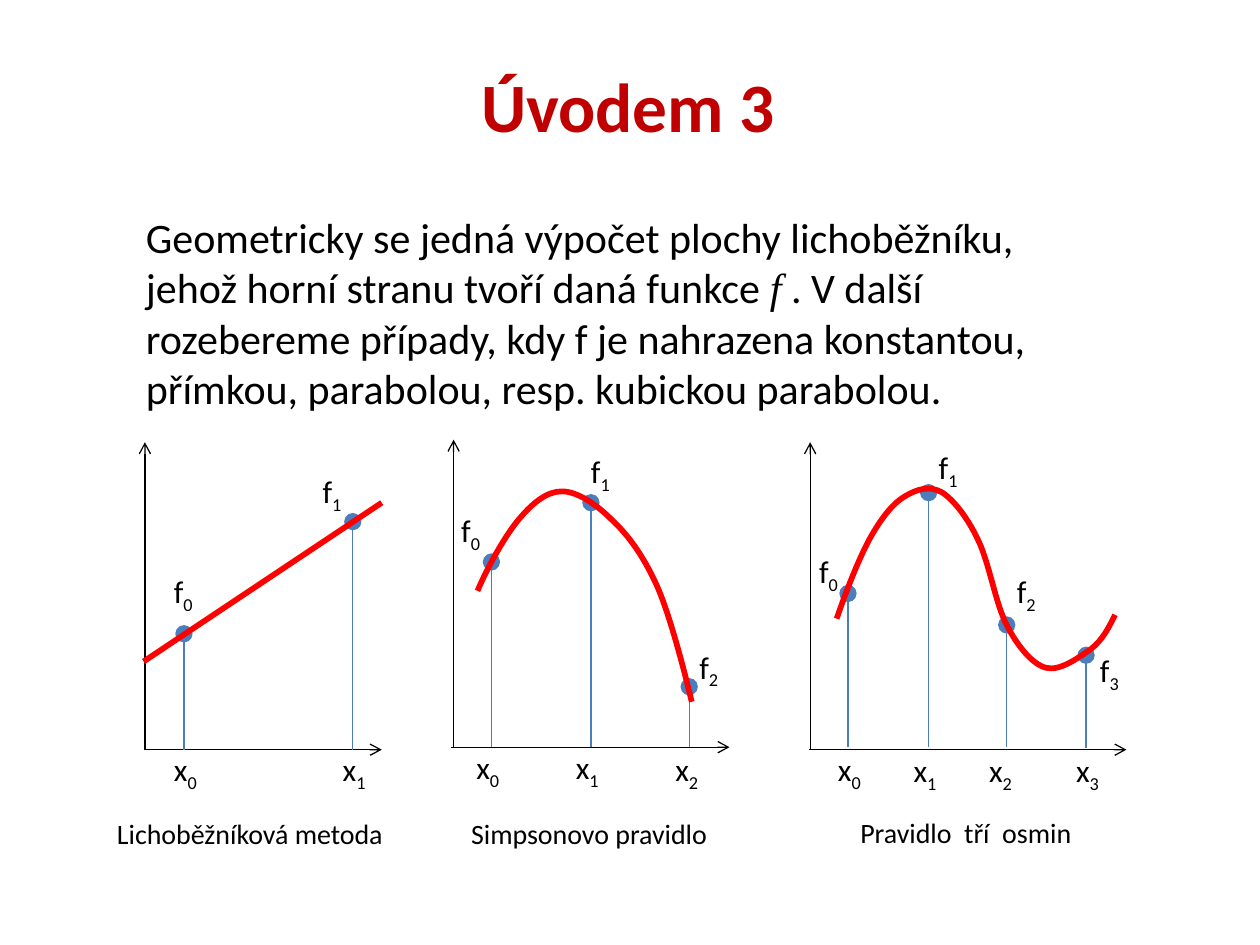
from pptx import Presentation
from pptx.dml.color import RGBColor
from pptx.enum.shapes import MSO_CONNECTOR as Connector
from pptx.enum.text import MSO_ANCHOR as Anchor, MSO_AUTO_SIZE as AutoSize, PP_ALIGN as Align
from pptx.oxml.ns import qn
from pptx.util import Inches, Pt
from lxml.etree import SubElement

# The slide is a grid of 100 columns by 75 rows.
CELL = Inches(0.1)
COLUMNS, ROWS = 100, 75
COLORS = {"title": "C00000", "text": "000000", "axis": "000000", "stem": "4B7EBC", "curve": "FF0000"}
LABEL_SIZE = (3.9, 3.4)
LABEL_MARGINS = {"margin_left": 0.8, "margin_top": 0, "margin_right": 0.4, "margin_bottom": 0.4}

# Axes: left end, baseline, right end, upright axis, its top.
# Points: stem x, stem foot, height of f, left and top of the x label, left and top of the f label.
CHARTS = [
    {
        "axes": (11.4, 59.5, 30.3, 11.5, 35.1),
        "points": [
            (14.6, 59.5, 50.3, 13, 59.5, 13, 45.4),
            (28, 59.5, 41.4, 26.4, 59.5, 24.8, 37.5),
        ],
        "curve": [(11.4, 52.5), (30.3, 39.9)],
        "caption": ("Lichoběžníková metoda", 8.3, 64.3, 23.6),
    },
    {
        "axes": (35.8, 59.3, 57.9, 36, 34.9),
        "points": [
            (39, 59.3, 44.6, 37, 59.4, 35.8, 40.6),
            (46.9, 59.3, 39.9, 44.9, 59.4, 46.1, 35.9),
            (54.7, 59.3, 54.5, 52.8, 59.5, 54.7, 51.4),
        ],
        "curve": [
            (37.9, 46.9),
            (38.7, 45), (40.1, 42.5), (41.2, 41.2),
            (42.3, 39.9), (43.4, 39), (44.6, 39),
            (45.8, 39), (47.3, 40), (48.5, 41.2),
            (49.8, 42.4), (51, 44), (52.1, 46.4),
            (53.2, 48.8), (54.5, 54), (54.9, 55.7),
        ],
        "caption": ("Simpsonovo pravidlo", 36.4, 64.3, 21.5),
    },
    {
        "axes": (64.2, 59.5, 89.4, 64.3, 35.1),
        "points": [
            (67.3, 59.3, 47.1, 65.7, 59.5, 64.2, 43.8),
            (73.7, 59.3, 39.1, 71.7, 59.6, 73.7, 35.6),
            (79.9, 59.3, 49.6, 77.7, 59.6, 79.9, 45.4),
            (86.2, 59.4, 52, 84.6, 59.6, 86.5, 51.7),
        ],
        "curve": [
            (66.4, 49.1),
            (67.2, 46.8), (68.1, 44.5), (69, 42.8),
            (69.9, 41.2), (70.8, 40), (71.8, 39.4),
            (72.8, 38.8), (73.8, 38.5), (74.8, 39.1),
            (75.7, 39.7), (76.8, 41.1), (77.6, 42.8),
            (78.5, 44.6), (79, 47.9), (79.9, 49.6),
            (80.7, 51.2), (81.9, 52.7), (83, 53),
            (84.1, 53.3), (85.6, 52.2), (86.6, 51.5),
            (87.5, 50.8), (88, 49.8), (88.5, 48.8),
        ],
        "caption": ("Pravidlo  tří  osmin", 67.3, 64.2, 19.7),
    },
]


def cells(*counts):
    return [round(count * CELL) for count in counts]


def add_span(para, text, size, color="text", **formats):
    span = para.add_run()
    span.text = text
    for name, value in {"name": "Calibri", "size": Pt(size), **formats}.items():
        setattr(span.font, name, value)
    span.font.color.rgb = RGBColor.from_string(COLORS[color])
    return span


def add_box(shapes, left, top, width, height):
    box = shapes.add_textbox(*cells(left, top, width, height))
    box.text_frame.word_wrap = True
    box.text_frame.auto_size = AutoSize.SHAPE_TO_FIT_TEXT
    return box.text_frame


def add_label(shapes, letter, index, left, top):
    frame = add_box(shapes, left, top, *LABEL_SIZE)
    for name, value in LABEL_MARGINS.items():
        setattr(frame, name, round(value * CELL))
    para = frame.paragraphs[0]
    add_span(para, letter, 18)
    subscript = add_span(para, str(index), 18)
    subscript.font._element.set("baseline", "-25000")


def style_line(line, color, width):
    line.color.rgb = RGBColor.from_string(COLORS[color])
    line.width = Pt(width)


def add_line(shapes, start, end, color, width=0.75, tail=None, tail_size="med"):
    line = shapes.add_connector(Connector.STRAIGHT, *cells(*start, *end))
    style_line(line.line, color, width)
    properties = line._element.spPr
    if tail:
        SubElement(properties.find(qn("a:ln")), qn("a:tailEnd"), type=tail, w=tail_size, len=tail_size)
    SubElement(properties, qn("a:effectLst"))


def add_curve(shapes, points):
    """Draw cubic segments through a start point and triples of control points."""
    start, *controls = [cells(*point) for point in points]
    builder = shapes.build_freeform(*start)
    builder.add_line_segments(controls, close=False)
    curve = builder.convert_to_shape()
    curve.shadow.inherit = False
    curve.fill.background()
    style_line(curve.line, "curve", 3.25)
    steps = list(curve._element.iter(qn("a:lnTo")))
    for triple in zip(steps[::3], steps[1::3], steps[2::3]):
        outline = triple[0].getparent()
        segment = SubElement(outline, qn("a:cubicBezTo"))
        for step in triple:
            segment.append(step[0])
            outline.remove(step)


def add_chart_drawing(page, axes, points, curve, caption):
    shapes = page.shapes.add_group_shape().shapes
    left, base, right, upright, top = axes
    for start, end in (((left, base), (right, base)), ((upright, base), (upright, top))):
        add_line(shapes, start, end, "axis", tail="arrow")
    for x, foot, height, *_ in points:
        add_line(shapes, (x, foot), (x, height), "stem", tail="oval", tail_size="lg")
    if len(curve) == 2:
        add_line(shapes, *curve, "curve", width=3.25)
    else:
        add_curve(shapes, curve)
    for index, point in enumerate(points):
        add_label(shapes, "x", index, *point[3:5])
        add_label(shapes, "f", index, *point[5:])
    text, caption_left, caption_top, width = caption
    frame = add_box(page.shapes, caption_left, caption_top, width, 3.7)
    add_span(frame.paragraphs[0], text, 16)


def add_title(page, text):
    title = page.shapes.title
    for name, value in zip(("left", "top", "width", "height"), cells(9.7, 4.4, 80.3, 7.9)):
        setattr(title, name, value)
    title.text_frame.vertical_anchor = Anchor.MIDDLE
    para = title.text_frame.paragraphs[0]
    para.alignment = Align.CENTER
    add_span(para, text, 39.6, "title", bold=True)


def add_introduction(page):
    para = add_box(page.shapes, 10.6, 16.3, 77.2, 17.2).paragraphs[0]
    add_span(para, "Geometricky se jedná výpočet plochy lichoběžníku, "
                   "jehož horní stranu tvoří daná funkce ", 24)
    add_span(para, "f", 24, name="Times New Roman", italic=True)
    add_span(para, " . V další rozebereme případy, kdy f je nahrazena konstantou, "
                   "přímkou, parabolou, resp. kubickou parabolou.", 24)


def main():
    deck = Presentation()
    deck.slide_width, deck.slide_height = cells(COLUMNS, ROWS)
    page = deck.slides.add_slide(deck.slide_layouts.get_by_name("Title Only"))
    add_title(page, "Úvodem 3")
    add_introduction(page)
    for chart in CHARTS:
        add_chart_drawing(page, **chart)
    deck.save("out.pptx")


if __name__ == "__main__":
    main()
